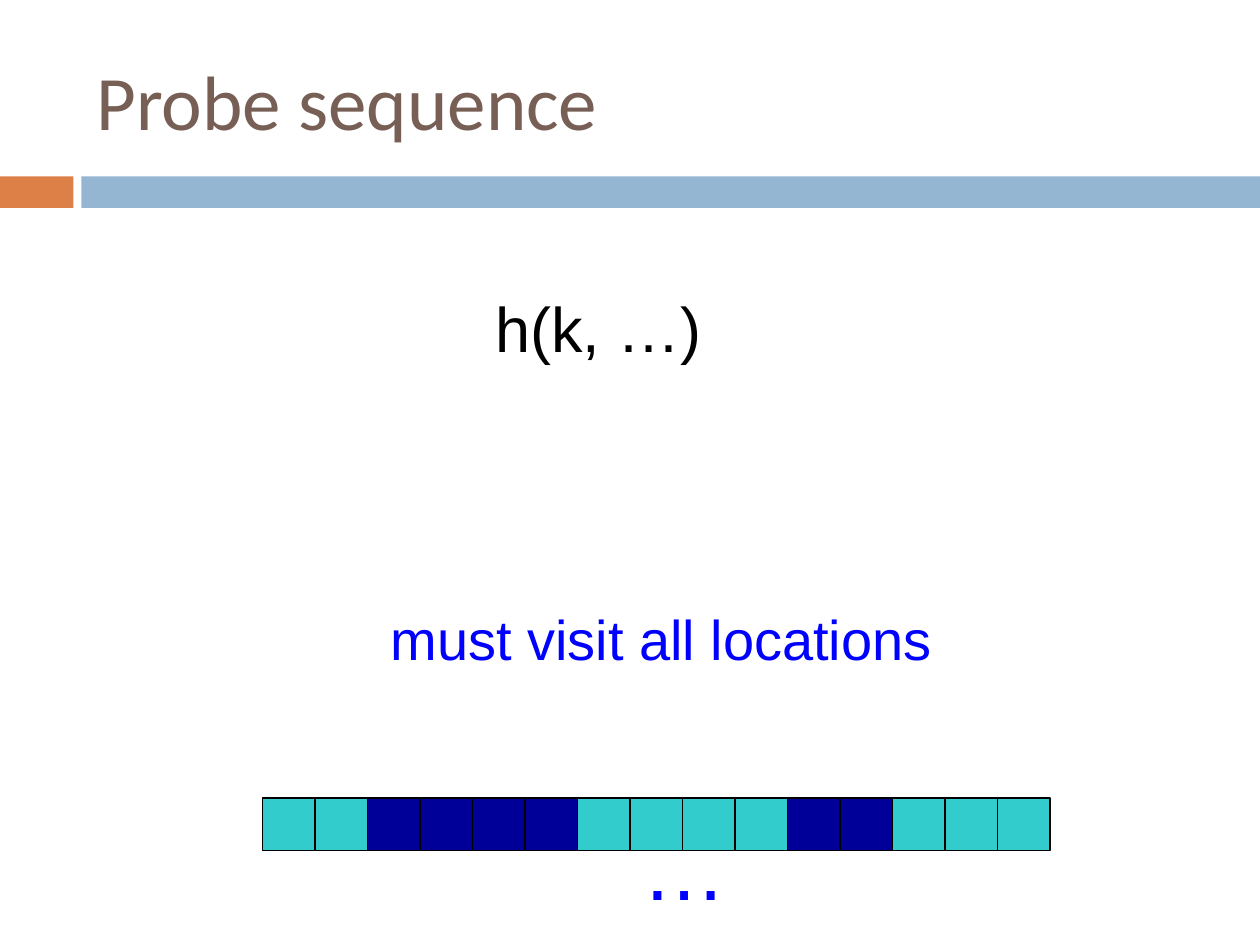
import pptx
import pptx.dml.color
import pptx.enum.shapes
import pptx.enum.text
import pptx.util
from pptx.oxml.ns import qn
import lxml.etree

Pt = pptx.util.Pt
RGB = pptx.dml.color.RGBColor
BLACK = RGB(0x00, 0x00, 0x00)
BLUE = RGB(0x00, 0x00, 0xFF)
NAVY = RGB(0x00, 0x00, 0x99)
TEAL = RGB(0x33, 0xCC, 0xCC)
BROWN = RGB(0x77, 0x5F, 0x55)
ORANGE = RGB(0xDD, 0x80, 0x47)
STEEL = RGB(0x94, 0xB6, 0xD2)

CELL = 30
CELL_COUNT = 15
TABLE_LEFT = 150
TABLE_TOP = 456
OCCUPIED = (2, 3, 4, 5, 10, 11)


def write_text(tf, text, size=32, font="Arial", color=BLACK, before=0):
    """Write one formatted, left-aligned paragraph into a text frame."""
    tf.word_wrap = True
    p = tf.paragraphs[0]
    p.alignment = pptx.enum.text.PP_ALIGN.LEFT
    p.space_before = Pt(before)
    r = p.add_run()
    r.text = text
    r.font.size = Pt(size)
    r.font.name = font
    r.font.color.rgb = color


def add_title(s, text):
    """Place and format the title placeholder."""
    sp = s.shapes.title
    sp.left, sp.top, sp.width, sp.height = Pt(48), Pt(18), Pt(642), Pt(78)
    sp.text_frame.vertical_anchor = pptx.enum.text.MSO_ANCHOR.MIDDLE
    write_text(sp.text_frame, text, size=44, font="Calibri", color=BROWN)


def add_label(s, text, left, top, width, height, size, color):
    """Add a text box with spacing in proportion to its type size."""
    sp = s.shapes.add_textbox(Pt(left), Pt(top), Pt(width), Pt(height))
    write_text(sp.text_frame, text, size=size, color=color, before=size / 10)
    sp.text_frame.auto_size = pptx.enum.text.MSO_AUTO_SIZE.SHAPE_TO_FIT_TEXT


def add_rect(shapes, left, top, width, height, fill, line=None):
    """Add a flat rectangle, outlined only when a line colour is given."""
    sp = shapes.add_shape(pptx.enum.shapes.MSO_SHAPE.RECTANGLE,
                          Pt(left), Pt(top), Pt(width), Pt(height))
    sp.shadow.inherit = False
    sp.fill.solid()
    sp.fill.fore_color.rgb = fill
    if line is None:
        sp.line.fill.background()
    else:
        sp.line.color.rgb = line
        sp.line.width = Pt(0.75)


def add_divider(shapes, x, top, bottom):
    """Add a thin vertical line between two cells."""
    c = shapes.add_connector(pptx.enum.shapes.MSO_CONNECTOR.STRAIGHT,
                             Pt(x), Pt(top), Pt(x), Pt(bottom))
    c.line.color.rgb = BLACK
    c.line.width = Pt(0.75)
    lxml.etree.SubElement(c._element.spPr, qn("a:effectLst"))


def add_hash_table(s):
    """Draw the row of slots and mark the occupied ones."""
    group = s.shapes.add_group_shape()
    add_rect(group.shapes, TABLE_LEFT, TABLE_TOP, CELL * CELL_COUNT, CELL, TEAL, BLACK)
    for i in range(1, CELL_COUNT):
        add_divider(group.shapes, TABLE_LEFT + i * CELL, TABLE_TOP, TABLE_TOP + CELL)
    for i in OCCUPIED:
        add_rect(s.shapes, TABLE_LEFT + i * CELL, TABLE_TOP, CELL, CELL, NAVY, BLACK)


def main():
    """Build and save the probe sequence slide."""
    prs = pptx.Presentation()
    prs.slide_width, prs.slide_height = Pt(720), Pt(540)
    s = prs.slides.add_slide(prs.slide_layouts[5])
    add_rect(s.shapes, 0, 100.8, 42, 18, ORANGE)
    add_rect(s.shapes, 46.5, 100.8, 673.5, 18, STEEL)
    add_title(s, "Probe sequence")
    add_hash_table(s)
    add_label(s, "h(k, …)", 276, 162, 222, 50.5, 36, BLACK)
    add_label(s, "…", 360, 463, 144, 65, 48, BLUE)
    add_label(s, "must visit all locations", 216, 342, 378, 45.5, 32, BLUE)
    prs.save("out.pptx")


if __name__ == "__main__":
    main()
